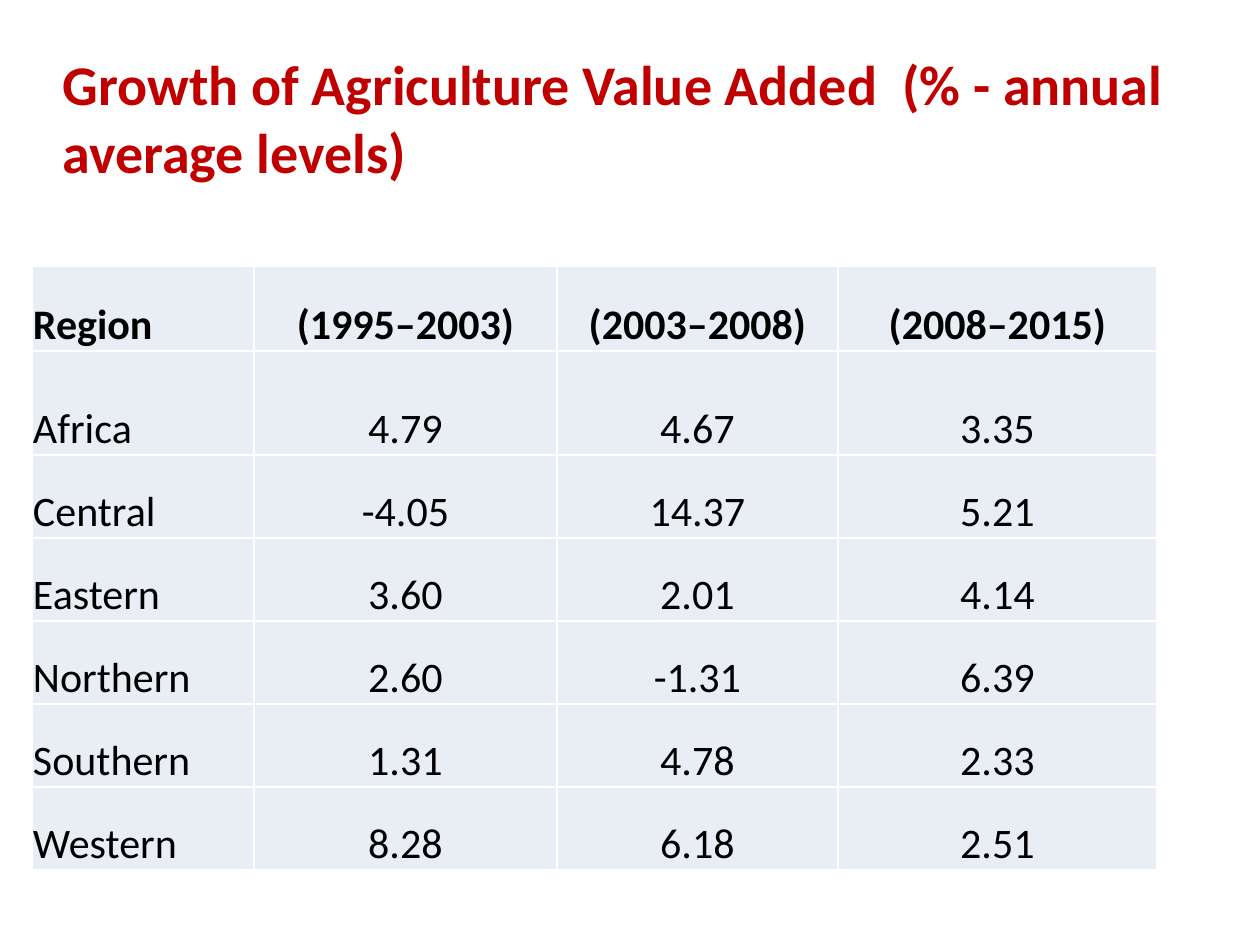
from lxml import etree
from pptx import Presentation
from pptx.dml.color import RGBColor
from pptx.enum.text import MSO_ANCHOR, PP_ALIGN
from pptx.oxml.ns import qn
from pptx.util import Pt

PX = 914400 // 126
LEFT, CENTER = PP_ALIGN.LEFT, PP_ALIGN.CENTER
MIDDLE, BOTTOM = MSO_ANCHOR.MIDDLE, MSO_ANCHOR.BOTTOM
COLORS = {"title": "C00000", "text": "000000", "fill": "E9EDF4", "line": "FFFFFF"}

HEAD = "Growth of Agriculture Value Added  (% - annual average levels)"
DATA = [
    ["Region", "(1995–2003)", "(2003–2008)", "(2008–2015)"],
    ["Africa", "4.79", "4.67", "3.35"],
    ["Central", "-4.05", "14.37", "5.21"],
    ["Eastern", "3.60", "2.01", "4.14"],
    ["Northern", "2.60", "-1.31", "6.39"],
    ["Southern", "1.31", "4.78", "2.33"],
    ["Western", "8.28", "6.18", "2.51"],
]
WIDTHS = [222, 303, 281, 319]
HEIGHTS = [85, 104] + [83] * 5


def style(para, size, color, bold, align):
    para.alignment = align
    for run in para.runs:
        font = run.font
        font.name = "Calibri"
        font.size = Pt(size)
        font.bold = bold
        font.color.rgb = RGBColor.from_string(COLORS[color])


def border(cell):
    props = cell._tc.get_or_add_tcPr()
    for side in ("lnL", "lnR", "lnT", "lnB"):
        line = etree.SubElement(props, qn("a:" + side), w=str(Pt(1)))
        fill = etree.SubElement(line, qn("a:solidFill"))
        etree.SubElement(fill, qn("a:srgbClr"), val=COLORS["line"])


deck = Presentation()
deck.slide_width = 1260 * PX
deck.slide_height = 945 * PX
slide = deck.slides.add_slide(deck.slide_layouts[6])

title = slide.shapes.add_textbox(50 * PX, 38 * PX, 1167 * PX, 158 * PX)
frame = title.text_frame
frame.word_wrap = True
frame.vertical_anchor = MIDDLE
frame.text = HEAD
style(frame.paragraphs[0], 32, "title", True, LEFT)

table = slide.shapes.add_table(
    len(DATA), len(WIDTHS), 32 * PX, 266 * PX, sum(WIDTHS) * PX, sum(HEIGHTS) * PX
).table
table.first_row = False
table.horz_banding = False
for col, width in zip(table.columns, WIDTHS):
    col.width = width * PX
for row, height in zip(table.rows, HEIGHTS):
    row.height = height * PX

for r, values in enumerate(DATA):
    for c, value in enumerate(values):
        cell = table.cell(r, c)
        cell.margin_left = cell.margin_right = cell.margin_top = PX
        cell.margin_bottom = 0
        cell.vertical_anchor = BOTTOM
        border(cell)
        cell.fill.solid()
        cell.fill.fore_color.rgb = RGBColor.from_string(COLORS["fill"])
        cell.text_frame.text = value
        style(cell.text_frame.paragraphs[0], 24, "text", r == 0, CENTER if c else LEFT)

deck.save("out.pptx")
